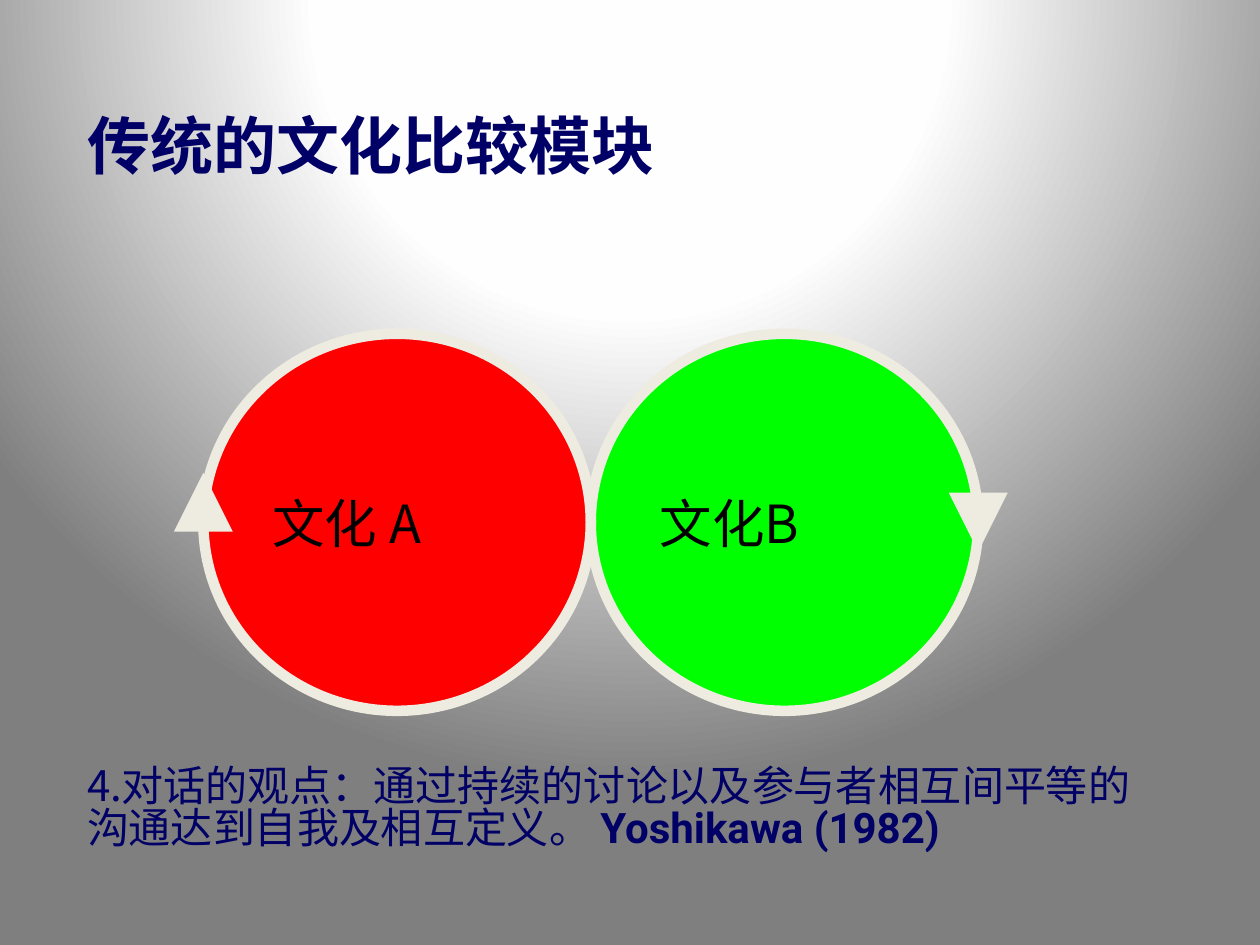
"""Build a slide comparing two cultures as touching circles in dialogue."""
import pptx
import pptx.dml.color
import pptx.enum.shapes
import pptx.enum.text
import pptx.oxml
import pptx.oxml.ns
import pptx.util
from pptx.util import Cm

RGBColor = pptx.dml.color.RGBColor
SHAPES = pptx.enum.shapes.MSO_SHAPE
NAVY = RGBColor(0x00, 0x00, 0x66)
IVORY = RGBColor(0xEE, 0xEC, 0xE1)
RED = RGBColor(0xFF, 0x00, 0x00)
GREEN = RGBColor(0x00, 0xFF, 0x00)
BLACK = RGBColor(0x00, 0x00, 0x00)
GLOW = ((0, "FFFFFF"), (40, "FEFEFE"), (100, "7F7F7F"))


class DialogueSlide:
    """Style and current slide, with a method for each kind of element."""

    chinese = "Noto Sans CJK SC"
    latin = "Roboto"

    def __init__(self, deck):
        self.slide = deck.slides.add_slide(deck.slide_layouts[1])

    def background(self, stops):
        self.slide.background.fill.solid()
        properties = self.slide.element.cSld.bg.bgPr
        colours = "".join(
            f'<a:gs pos="{position * 1000}"><a:srgbClr val="{colour}"/></a:gs>'
            for position, colour in stops)
        gradient = pptx.oxml.parse_xml(
            f'<a:gradFill {pptx.oxml.ns.nsdecls("a")} rotWithShape="1">'
            f'<a:gsLst>{colours}</a:gsLst><a:path path="circle">'
            '<a:fillToRect l="50000" t="-80000" r="50000" b="180000"/>'
            '</a:path></a:gradFill>')
        properties.replace(properties[0], gradient)

    def format_run(self, run, size, colour, bold=False, face=None):
        font = run.font
        font.name = face or self.chinese
        font.size = pptx.util.Pt(size)
        font.bold = bold
        font.color.rgb = colour
        east_asian = pptx.oxml.parse_xml(
            f'<a:ea {pptx.oxml.ns.nsdecls("a")} typeface="{font.name}"/>')
        font._element.find(pptx.oxml.ns.qn("a:latin")).addnext(east_asian)

    def format_frame(self, frame, wrap=True):
        frame.word_wrap = wrap
        frame.auto_size = pptx.enum.text.MSO_AUTO_SIZE.NONE
        frame.vertical_anchor = pptx.enum.text.MSO_ANCHOR.MIDDLE
        frame.paragraphs[0].alignment = pptx.enum.text.PP_ALIGN.LEFT

    def place(self, holder, left, top, width, height, text):
        holder.left, holder.top = Cm(left), Cm(top)
        holder.width, holder.height = Cm(width), Cm(height)
        holder.text_frame.text = text
        self.format_frame(holder.text_frame)
        return holder.text_frame.paragraphs[0]

    def title(self, text, *box):
        heading = self.place(self.slide.shapes.title, *box, text)
        self.format_run(heading.runs[0], 36, NAVY, bold=True)

    def body(self, text, citation, *box):
        statement = self.place(self.slide.placeholders[1], *box, text)
        statement.line_spacing = 0.84
        statement.space_before = pptx.util.Pt(0)
        properties = statement._p.get_or_add_pPr()
        properties.set("marL", "0")
        properties.set("indent", "0")
        properties.append(pptx.oxml.parse_xml(
            f'<a:buNone {pptx.oxml.ns.nsdecls("a")}/>'))
        self.format_run(statement.runs[0], 24, NAVY)
        source = statement.add_run()
        source.text = citation
        self.format_run(source, 24, NAVY, bold=True, face=self.latin)

    def shape(self, kind, left, top, width, height, colour):
        figure = self.slide.shapes.add_shape(
            kind, Cm(left), Cm(top), Cm(width), Cm(height))
        figure.shadow.inherit = False
        figure.fill.solid()
        figure.fill.fore_color.rgb = colour
        return figure

    def culture(self, text, left, top, width, height, colour):
        circle = self.shape(SHAPES.OVAL, left, top, width, height, colour)
        circle.line.color.rgb = IVORY
        circle.line.width = pptx.util.Pt(6)
        circle.text_frame.text = text
        self.format_frame(circle.text_frame, wrap=False)
        self.format_run(circle.text_frame.paragraphs[0].runs[0], 30, BLACK)

    def arrowhead(self, centre, top, rotation=0):
        size = 1.19
        head = self.shape(SHAPES.FLOWCHART_EXTRACT, centre - size / 2, top,
                          size, size, IVORY)
        head.line.fill.background()
        head.rotation = rotation


def main():
    deck = pptx.Presentation()
    deck.slide_width, deck.slide_height = Cm(25.4), Cm(19.05)
    page = DialogueSlide(deck)
    page.background(GLOW)
    page.title("传统的文化比较模块", 1.5, 1.32, 23.22, 3.18)
    page.body("4.对话的观点：通过持续的讨论以及参与者相互间平等的沟通达到自我及相互定义。 ",
              "Yoshikawa (1982)", 1.5, 14.73, 21.59, 3.18)
    left, top, width, height = 4.1, 6.73, 7.81, 7.6
    page.culture("文化B", left + width, top, width, height, GREEN)
    page.culture("文化 A", left, top, width, height, RED)
    page.arrowhead(left + 2 * width, 9.93, rotation=180)
    page.arrowhead(left, 9.53)
    deck.save("out.pptx")


if __name__ == "__main__":
    main()
